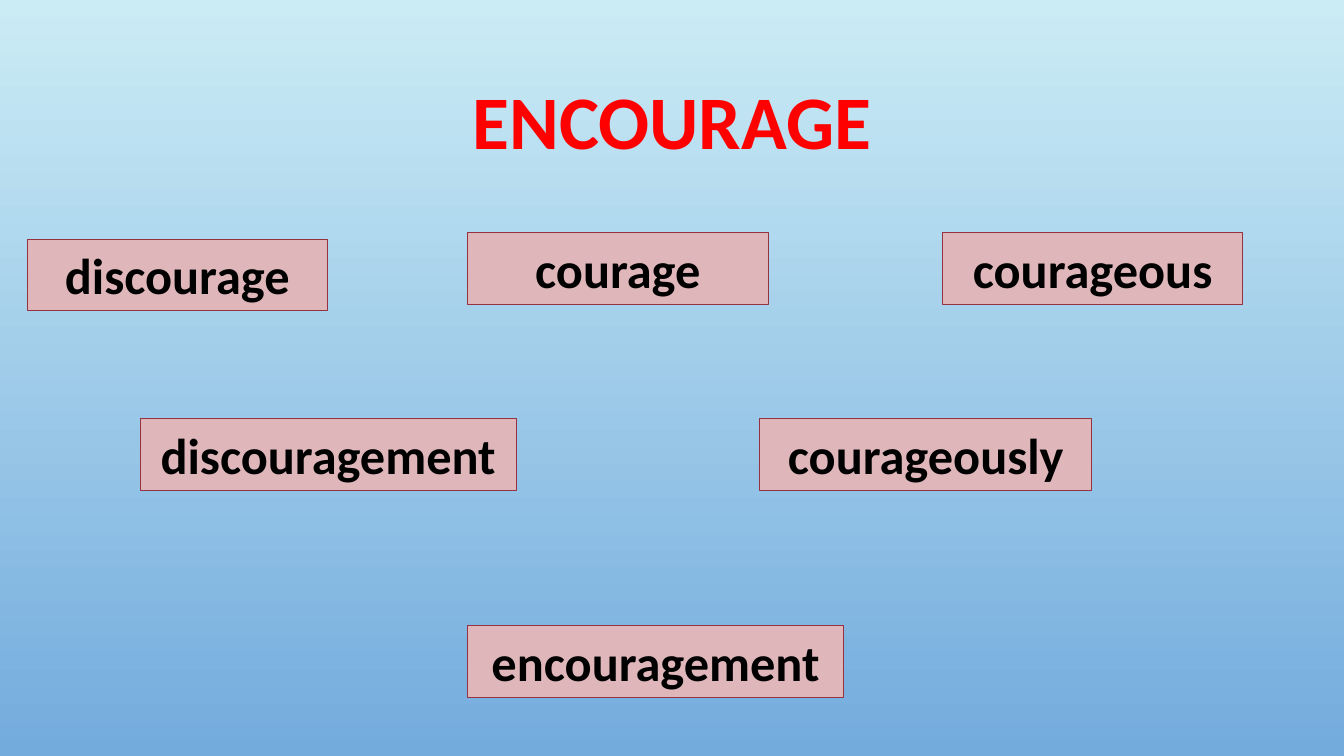
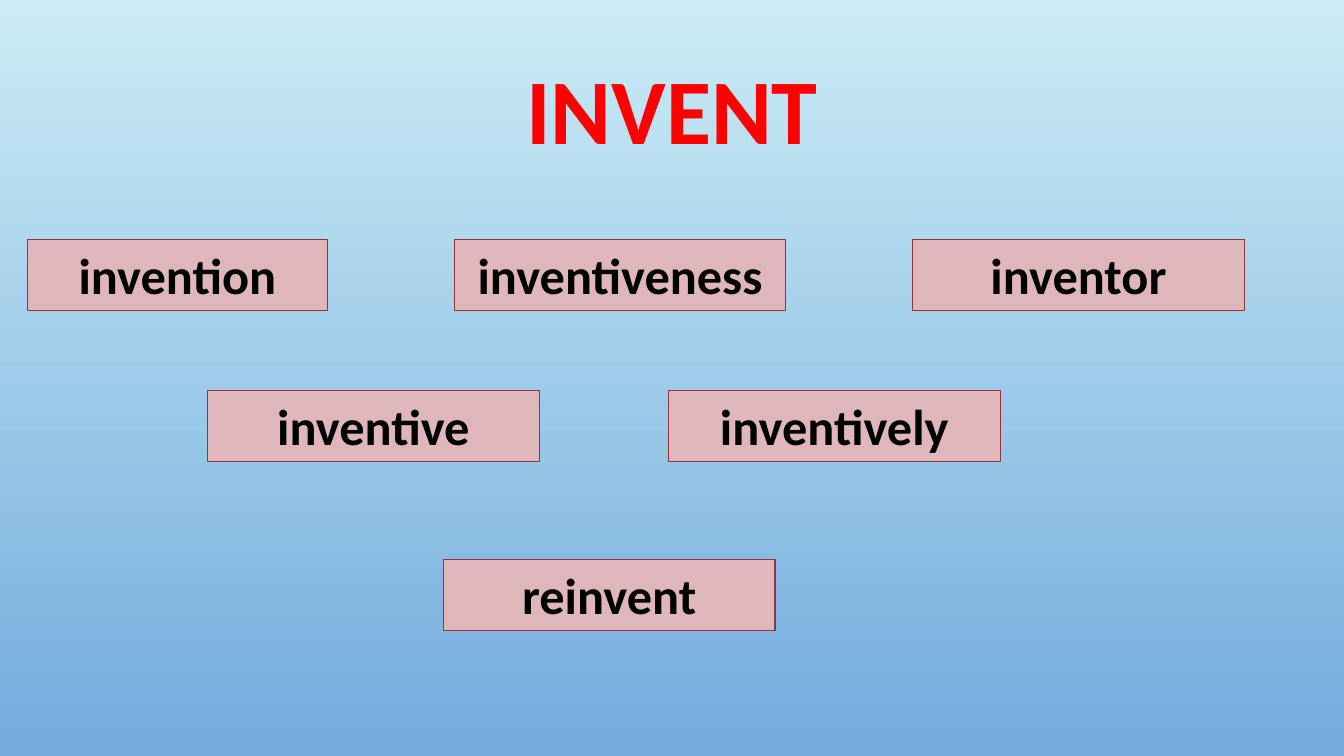
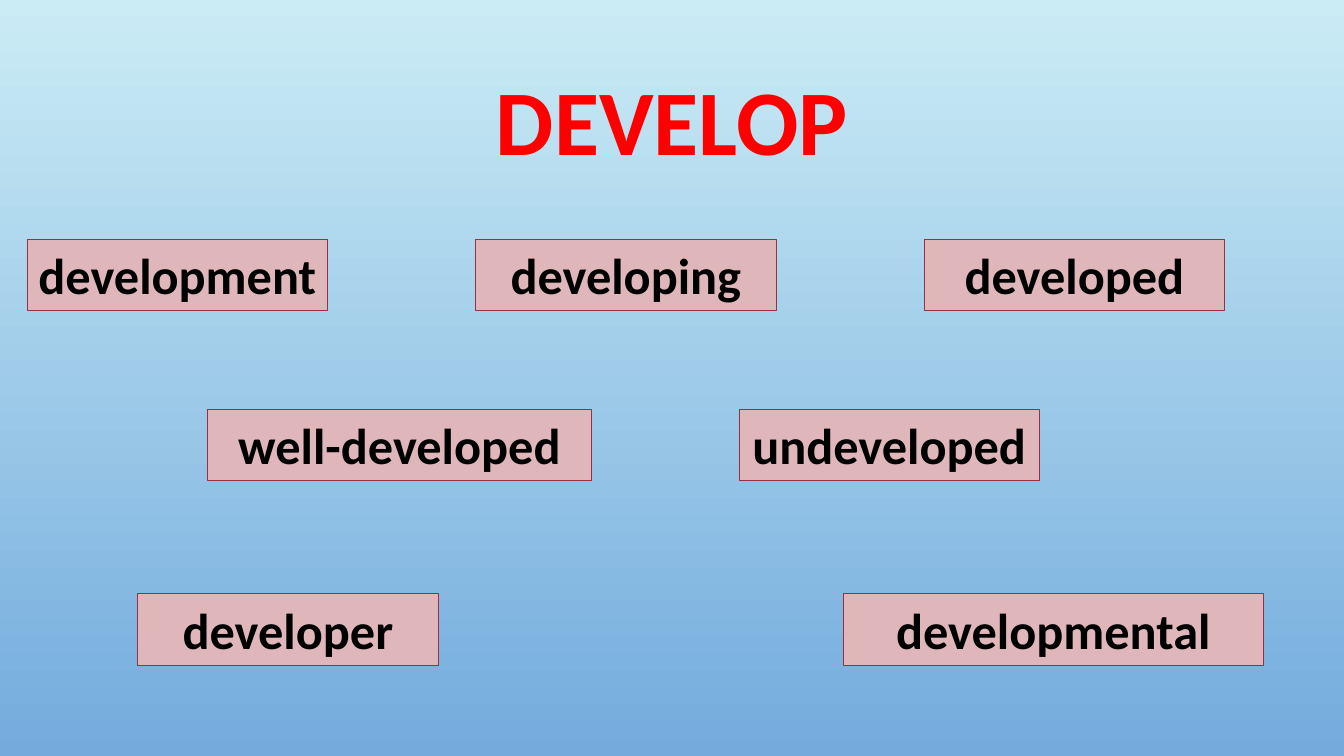
from pptx import Presentation
from pptx.dml.color import RGBColor
from pptx.enum import shapes, text
from pptx.util import Pt

SLIDE_SIZE = (960, 540)
SKY_TOP, SKY_BOTTOM = "CBECF5", "73ABDD"
CARD_FILL, CARD_LINE = "DFB7BB", "953241"
RED, BLACK = "FF0000", "000000"
CARD_HEIGHT = 51.1
NARROW, MEDIUM, WIDE, WIDER, WIDEST = 214.6, 237, 268.6, 274.3, 300.2
TITLE_LEFT, TITLE_TOP = 72, 49

FAMILIES = [
    {"title": "ENCOURAGE", "size": 54, "height": 80.6, "rows": [
        (170.8, 19.4, 0, [("discourage", NARROW)]),
        (166.2, 334, 124.6, [("courage", NARROW), ("courageous", NARROW)]),
        (299.2, 100.2, 174, [("discouragement", WIDE), ("courageously", MEDIUM)]),
        (447, 334, 0, [("encouragement", WIDE)]),
    ]},
    {"title": "INVENT", "size": 66, "height": 65.5, "rows": [
        (170.8, 19.4, 90.4, [("invention", NARROW), ("inventiveness", MEDIUM),
                             ("inventor", MEDIUM)]),
        (278.8, 148.2, 92.2, [("inventive", MEDIUM), ("inventively", MEDIUM)]),
        (399.4, 316.6, 0, [("reinvent", MEDIUM)]),
    ]},
    {"title": "DEVELOP", "size": 66, "height": 82, "rows": [
        (170.8, 19.4, 105.8, [("development", NARROW), ("developing", NARROW),
                              ("developed", NARROW)]),
        (292.4, 148.2, 105.4, [("well-developed", WIDER), ("undeveloped", NARROW)]),
        (424.2, 98.4, 289.4, [("developer", NARROW), ("developmental", WIDEST)]),
    ]},
]


def color(value):
    return RGBColor.from_string(value)


def write(shape, words, size, ink, spacing=1.0, **frame_format):
    frame = shape.text_frame
    for name, value in {"word_wrap": True, **frame_format}.items():
        setattr(frame, name, value)
    para = frame.paragraphs[0]
    para.alignment = text.PP_ALIGN.CENTER
    para.line_spacing = spacing
    span = para.add_run()
    span.text = words
    for name, value in {"name": "Calibri", "size": Pt(size), "bold": True}.items():
        setattr(span.font, name, value)
    span.font.color.rgb = color(ink)


def add_title(page, family):
    width = SLIDE_SIZE[0] - 2 * TITLE_LEFT
    area = (TITLE_LEFT, TITLE_TOP, width, family["height"])
    box = page.shapes.add_textbox(*map(Pt, area))
    write(box, family["title"], family["size"], RED, 0.9,
          vertical_anchor=text.MSO_ANCHOR.MIDDLE,
          auto_size=text.MSO_AUTO_SIZE.NONE)


def add_card(page, word, left, top, width):
    area = (left, top, width, CARD_HEIGHT)
    card = page.shapes.add_shape(shapes.MSO_SHAPE.RECTANGLE, *map(Pt, area))
    card.shadow.inherit = False
    card.fill.solid()
    card.fill.fore_color.rgb = color(CARD_FILL)
    card.line.color.rgb = color(CARD_LINE)
    card.line.width = Pt(0.75)
    write(card, word, 36, BLACK, vertical_anchor=text.MSO_ANCHOR.TOP,
          auto_size=text.MSO_AUTO_SIZE.SHAPE_TO_FIT_TEXT)


def paint_background(master):
    fill = master.background.fill
    fill.gradient()
    fill.gradient_angle = 270
    for stop, position, shade in zip(fill.gradient_stops, (0, 1), (SKY_TOP, SKY_BOTTOM)):
        stop.position = position
        stop.color.rgb = color(shade)


def main():
    deck = Presentation()
    deck.slide_width, deck.slide_height = map(Pt, SLIDE_SIZE)
    paint_background(deck.slide_master)
    for family in FAMILIES:
        page = deck.slides.add_slide(deck.slide_layouts[6])
        add_title(page, family)
        for top, left, gap, cards in family["rows"]:
            for word, width in cards:
                add_card(page, word, left, top, width)
                left += width + gap
    deck.save("out.pptx")


if __name__ == "__main__":
    main()
